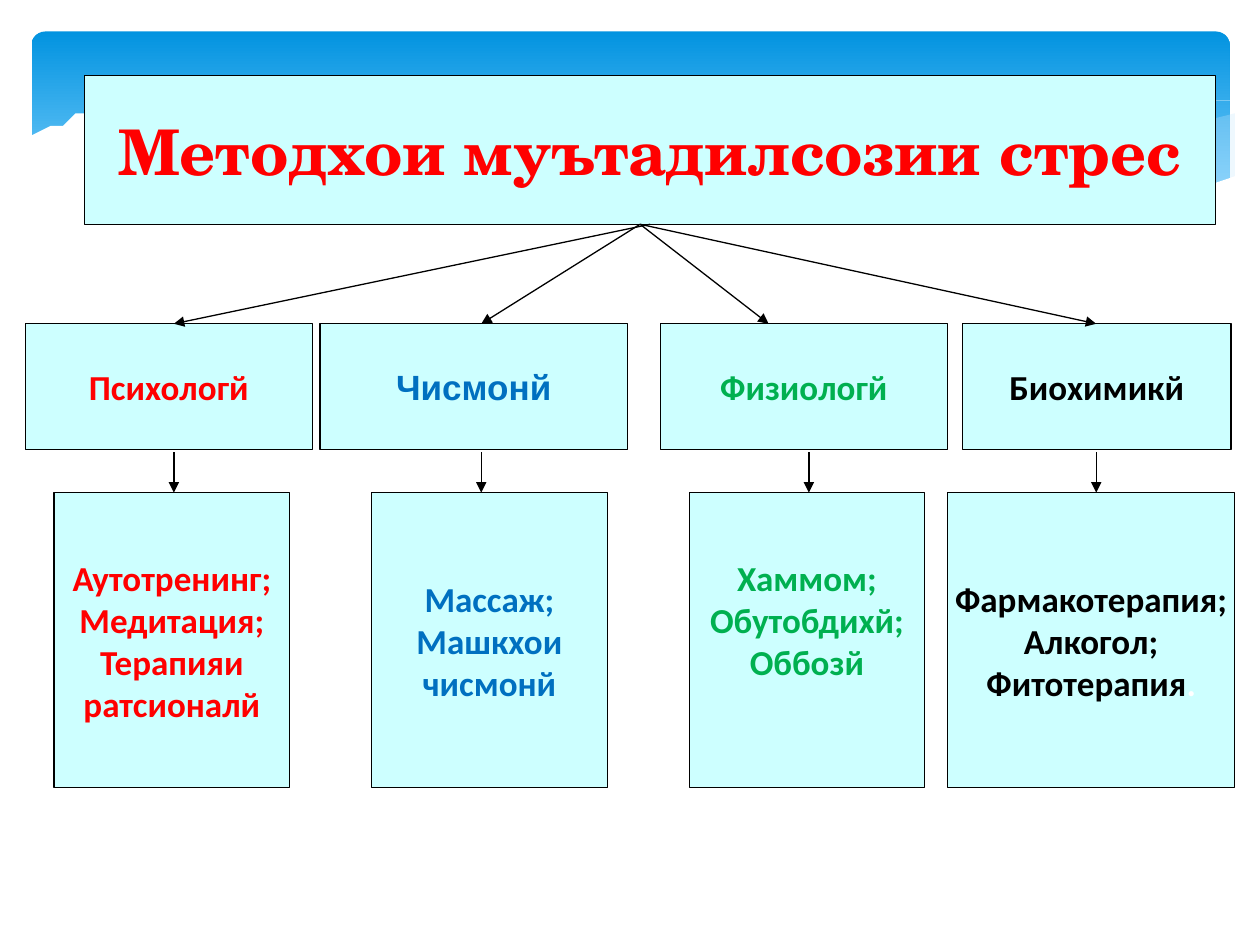
from lxml.etree import SubElement
from pptx import Presentation
from pptx.dml.color import RGBColor
from pptx.enum.shapes import MSO_CONNECTOR, MSO_SHAPE
from pptx.enum.text import MSO_ANCHOR, PP_ALIGN
from pptx.oxml.ns import qn
from pptx.util import Inches, Pt

# Content: title, then one entry per method
TITLE = "Методхои муътадилсозии стрес"
METHODS = [
    {"name": "Психологй", "font": "Calibri", "color": "red",
     "items": ["Аутотренинг;", "Медитация;", "Терапияи", "ратсионалй"],
     "head": (2, 22.8), "detail": (4.3, 18.7), "fan": (51.6, 13.8), "drop": 13.8},
    {"name": "Чисмонй", "font": "Arial", "color": "blue",
     "items": ["Массаж;", "Машкхои", "чисмонй"],
     "head": (25.4, 24.4), "detail": (29.5, 18.7), "fan": (50.8, 38.2), "drop": 38.2},
    {"name": "Физиологй", "font": "Calibri", "color": "green",
     "items": ["Хаммом;", "Обутобдихй;", "Оббозй"], "lift": 3.3,
     "head": (52.4, 22.8), "detail": (54.7, 18.7), "fan": (50.8, 61), "drop": 64.2},
    {"name": "Биохимикй", "font": "Calibri", "color": "black",
     "items": ["Фармакотерапия;", "Алкогол;", "Фитотерапия"], "end": ".",
     "head": (76.4, 21.3), "detail": (75.2, 22.8), "fan": (50.8, 87), "drop": 87},
]
COLORS = {"red": "FF0000", "blue": "0070C0", "green": "00B050", "black": "000000",
          "white": "FFFFFF", "box": "CDFFFF", "sky": "0293E0", "pale": "83D3FE",
          "mist": "C6E7FC"}

# Grid of 100 columns by 75 rows; each row is (top, height)
COLUMNS, ROWS = 100, 75
TITLE_BOX = (6.7, 6, 89.8, 11.8)
HEAD_ROW, DETAIL_ROW = (25.7, 10), (39.1, 23.4)
FAN_TOP, DROP_TOP = 17.8, 35.9

# Banner waves, in grid units
MIST_WAVE = [(97.5, 9.4), (93.5, 10.1), (89.1, 11), (86.1, 11.8), (80.5, 13.1),
             (75.3, 14.3), (70.6, 15.2), (66.1, 16), (70.5, 16.5), (74.5, 16.9),
             (78.1, 17.2), (82.4, 17.2), (86.3, 17), (89.7, 16.5), (92.8, 15.8),
             (95, 15.2), (97.6, 14.1), (97.6, 9.4)]
WHITE_CREST = [(61.3, 15.1), (65.3, 14.1), (69.5, 13), (74.8, 11.7), (80.6, 10.4),
               (86.6, 9.3), (91, 8.6), (95.1, 8.2), (97.5, 8)]
WHITE_WAVE = [(97.7, 14.1), (95, 15.1), (92, 15.9), (88.7, 16.6), (85, 17),
              (80.9, 17.1), (76.1, 17), (70.8, 16.5), (64.8, 15.6), (57.9, 14.4),
              (50.3, 12.8), (44.7, 11.4), (39.1, 10.2), (34, 9.2), (29.2, 8.5),
              (25, 8.1), (21.1, 7.8), (17.7, 7.8), (14.6, 7.9), (11.9, 8.2),
              (9.5, 8.5), (7.6, 8.9), (5.9, 9.3), (4.6, 9.8), (3.6, 10.2),
              (2.3, 10.7), (2.3, 22.4), (97.7, 22.4)]

deck = Presentation()
deck.slide_width, deck.slide_height = Inches(10), Inches(7.5)
page = deck.slides.add_slide(deck.slide_layouts[6])
UNIT = deck.slide_width // COLUMNS


def grid(*values):
    return [round(value * UNIT) for value in values]


def rgb(name):
    return RGBColor.from_string(COLORS[name])


def add_wave(points, color=None, closed=True):
    builder = page.shapes.build_freeform(*points[0], scale=UNIT)
    builder.add_line_segments(points[1:], close=closed)
    wave = builder.convert_to_shape()
    wave.shadow.inherit = False
    if color:
        wave.fill.solid()
        wave.fill.fore_color.rgb = rgb(color)
        wave.line.fill.background()
    else:
        wave.fill.background()
        wave.line.color.rgb = rgb("white")
        wave.line.width = Pt(0.25)
    return wave


def add_span(para, text, color, font, size):
    span = para.add_run()
    span.text = text
    for key, value in {"name": font, "size": Pt(size), "bold": True}.items():
        setattr(span.font, key, value)
    span.font.color.rgb = rgb(color)


def add_box(area, lines, color, font="Calibri", size=20, lift=0, end=""):
    box = page.shapes.add_shape(MSO_SHAPE.RECTANGLE, *grid(*area))
    box.shadow.inherit = False
    box.fill.solid()
    box.fill.fore_color.rgb = rgb("box")
    box.line.color.rgb = rgb("black")
    box.line.width = Pt(0.75)
    frame = box.text_frame
    layout = {"word_wrap": False, "vertical_anchor": MSO_ANCHOR.MIDDLE,
              "margin_bottom": Inches(0.05) + grid(lift)[0]}
    for key, value in layout.items():
        setattr(frame, key, value)
    for index, line in enumerate(lines):
        para = frame.add_paragraph() if index else frame.paragraphs[0]
        para.alignment = PP_ALIGN.CENTER
        add_span(para, line, color, font, size)
    if end:
        add_span(para, end, "white", font, size)


def add_arrow(*ends):
    arrow = page.shapes.add_connector(MSO_CONNECTOR.STRAIGHT, *grid(*ends))
    arrow.line.color.rgb = rgb("black")
    arrow.line.width = Pt(0.75)
    SubElement(arrow.line._get_or_add_ln(), qn("a:tailEnd"), type="triangle")
    SubElement(arrow._element.spPr, qn("a:effectLst"))


# Banner
banner = page.shapes.add_shape(MSO_SHAPE.ROUNDED_RECTANGLE, *grid(2.5, 2.5, 95.1, 15.6))
banner.adjustments[0] = 0.07
banner.shadow.inherit = False
banner.line.fill.background()
banner.fill.gradient()
banner.fill.gradient_angle = 270
for stop, (color, position) in zip(banner.fill.gradient_stops, [("sky", 0), ("pale", 0.9)]):
    stop.color.rgb = rgb(color)
    stop.position = position
mist = add_wave(MIST_WAVE, "mist")
mist_color = mist._element.spPr.find(qn("a:solidFill")).find(qn("a:srgbClr"))
SubElement(mist_color, qn("a:alpha"), val="29000")
add_wave(WHITE_CREST, closed=False)
add_wave(WHITE_WAVE, "white")

# Title and method boxes
add_box(TITLE_BOX, [TITLE], "red", "TeX Gyre Schola", 36)
for method in METHODS:
    for key, (top, height), lines, style in (
            ("head", HEAD_ROW, [method["name"]], {"font": method["font"]}),
            ("detail", DETAIL_ROW, method["items"],
             {"lift": method.get("lift", 0), "end": method.get("end", "")})):
        left, width = method[key]
        add_box((left, top, width, height), lines, method["color"], **style)

# Arrows from the title to each method and on to its details
for method in METHODS:
    start, tip = method["fan"]
    add_arrow(start, FAN_TOP, tip, HEAD_ROW[0])
    add_arrow(method["drop"], DROP_TOP, method["drop"], DETAIL_ROW[0])

deck.save("out.pptx")
